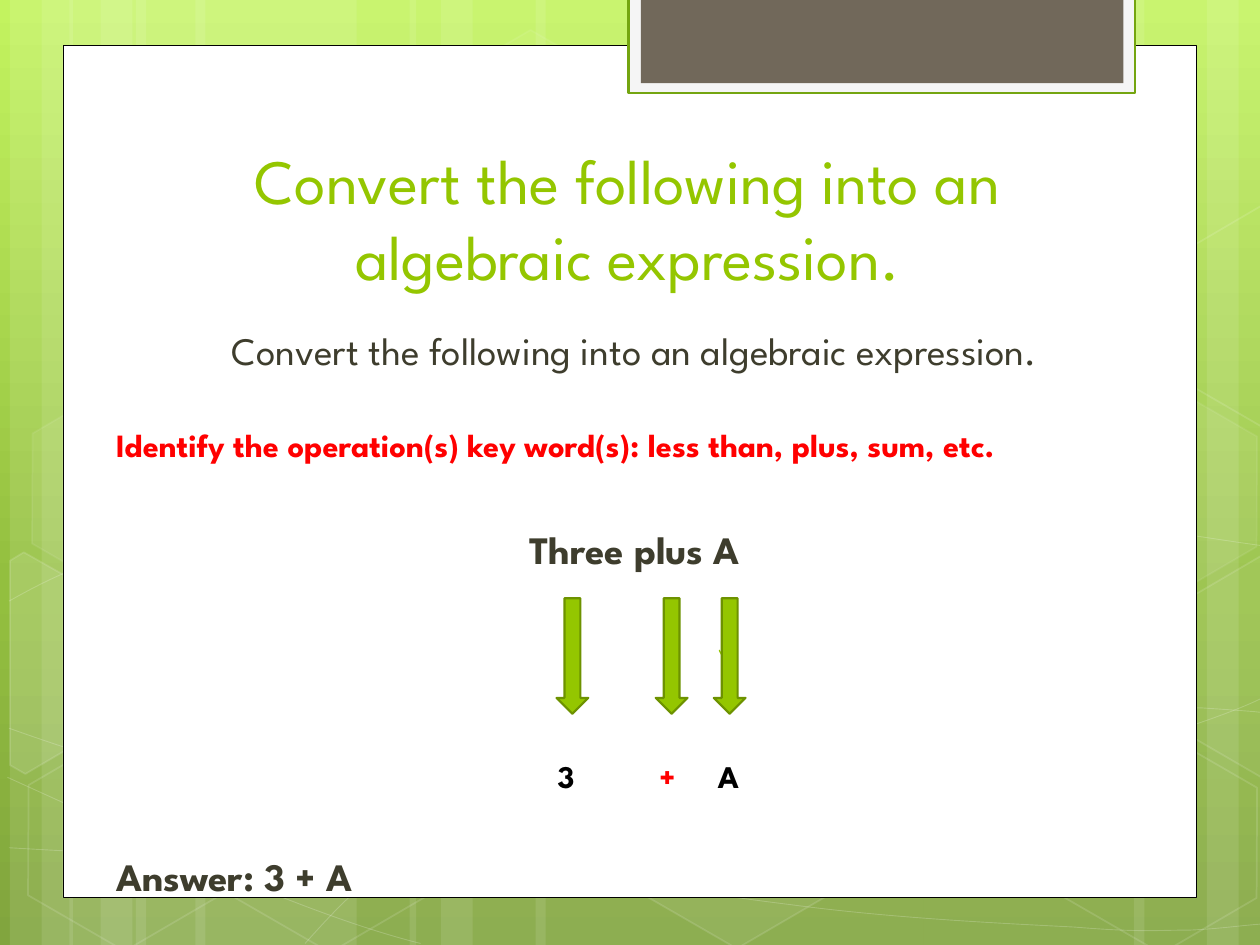
"""Build the slide on turning words into an algebraic expression."""
from copy import deepcopy
from math import cos, radians, sin
from typing import NamedTuple, Optional

from lxml.etree import SubElement
from pptx import Presentation
from pptx.dml.color import RGBColor
from pptx.enum.shapes import MSO_CONNECTOR as Link, MSO_SHAPE as Kind
from pptx.enum.text import MSO_ANCHOR as Anchor, PP_ALIGN as Align
from pptx.oxml.ns import qn
from pptx.util import Cm, Pt

FONT = "League Spartan"
WHITE, GREEN, DARK, RED, BLACK = "FFFFFF", "94C600", "3E3D2D", "FF0000", "000000"
WIDE, HIGH = 25.4, 19.05
TILT = 30
ARROWS = (14.39, 11.22, 13.22)


class Box(NamedTuple):
    left: float
    top: float
    width: float
    height: float


class Look(NamedTuple):
    fill: Optional[str] = None
    line: Optional[str] = None
    weight: float = 1
    fill_part: int = 100
    line_part: int = 100


class Hex(NamedTuple):
    left: float
    top: float
    fill: int
    line: int


class Cut(NamedTuple):
    mid: tuple
    points: tuple
    fill: int


class Run(NamedTuple):
    text: str
    size: float
    hue: str
    bold: bool = False


class Para(NamedTuple):
    runs: tuple
    align: Align = Align.LEFT
    before: float = 0


STRIPES = (
    (2.74, 4.45), (0.2, 1.27), (0.84, 2.11),
    (3.94, 4.45), (1.4, 1.27), (2.03, 2.11),
    (18.62, 4.45), (24.33, 1.27), (22.86, 2.11),
    (10.8, 7.82), (8.26, 1.27), (8.89, 2.11),
)
CURVES = (
    ((0.18, 17.09), (1.55, 17.17), (2.92, 17.25), (4.83, 17.22), (6.73, 17.2),
     (9.09, 17.15), (11.63, 16.89), (14.17, 16.64), (17.78, 16.15), (20.12, 15.67),
     (22.43, 15.19), (24.82, 14.43), (25.58, 14)),
    ((0.18, 12.12), (0.91, 11.71), (1.65, 11.33), (3.07, 10.95), (4.52, 10.57),
     (6.58, 10.01), (8.81, 9.83), (11.07, 9.65), (13.82, 9.63), (16.61, 9.83),
     (19.41, 10.03), (24.05, 10.82), (25.58, 11.02)),
    ((0.15, 15.67), (3.23, 17.07), (6.27, 18.47), (8.48, 19.02)),
    ((0.18, 14.68), (0.97, 14.96), (1.78, 15.24), (3.25, 15.65), (4.72, 16.03),
     (6.93, 16.66), (9.07, 17.09), (11.18, 17.53), (13.84, 17.98), (15.95, 18.24),
     (18.06, 18.52), (20.32, 18.62), (21.67, 18.69), (22.99, 18.8), (23.34, 18.75),
     (24, 18.75), (24.66, 18.72), (25.12, 18.64), (25.58, 18.62)),
    ((6.15, 19.02), (6.6, 18.52), (7.06, 18.01), (7.67, 17.55), (8.28, 17.09),
     (9.14, 16.59), (9.86, 16.23), (10.57, 15.88), (11, 15.72), (11.94, 15.47),
     (12.85, 15.21), (14.55, 14.86), (15.44, 14.68), (16.36, 14.5), (16.48, 14.5),
     (17.27, 14.45), (18.06, 14.38), (19.3, 14.3), (20.17, 14.27), (21.06, 14.25),
     (22.5, 14.27), (22.5, 14.27), (23.07, 14.27), (23.64, 14.27), (24.21, 14.27),
     (24.66, 14.3), (25.1, 14.33), (25.32, 14.35), (25.55, 14.38), (25.48, 14.35), (25.55, 14.38)),
)
HEXES = (
    Hex(8.48, 0.91, 4, 8), Hex(12.62, 14.96, 6, 12), Hex(0.28, 15.01, 0, 12),
    Hex(0.36, 7.92, 7, 8), Hex(4.42, 15.04, 0, 12), Hex(19.13, 11.51, 10, 12),
    Hex(21.18, 15.06, 0, 12), Hex(21.18, 7.98, 7, 8),
)
LEFT = ((0.2, 11.3), (0.48, 11.13), (2.44, 12.24), (2.41, 14.48), (0.51, 15.6), (0.2, 15.42))
RIGHT = ((23.52, 12.32), (25.43, 11.2), (25.63, 11.33), (25.63, 15.57), (25.45, 15.67), (23.52, 14.55))
UPPER = tuple((x, y - 7.06) for x, y in RIGHT)
CUTS = (Cut((0.91, 13.59), LEFT, 10), Cut((25.02, 13.21), RIGHT, 4), Cut((25.02, 6.12), UPPER, 0))
TITLE = (Para((Run("Convert the following into an algebraic expression.", 36, GREEN),), Align.CENTER),)
BODY = (
    Para((Run("Convert the following into an algebraic expression.", 22.2, DARK),), Align.CENTER),
    Para((Run("Identify the operation(s) key word(s): less than, plus, sum, etc.", 18.5, RED, True),), before=29.6),
    Para((Run("Three plus A", 22.2, DARK, True),), Align.CENTER, 35.2),
    Para((Run("Answer: 3 + A", 22.2, DARK, True),), before=160.2),
)
TERMS = (Para((Run("3\t", 18, BLACK, True), Run("+\t", 18, RED, True), Run("A", 18, BLACK, True))),)


def tint(hue: str) -> RGBColor:
    return RGBColor.from_string(hue)


def fade(node, part: int) -> None:
    if part < 100:
        for hue in node.iter(qn("a:srgbClr")):
            SubElement(hue, qn("a:alpha")).set("val", str(part * 1000))


def style(shape, look: Look) -> None:
    shape.shadow.inherit = False
    props = shape.element.spPr
    if look.fill and look.fill_part:
        shape.fill.solid()
        shape.fill.fore_color.rgb = tint(look.fill)
        fade(props, look.fill_part)
    else:
        shape.fill.background()
    if look.line:
        shape.line.color.rgb = tint(look.line)
        shape.line.width = Pt(look.weight)
        fade(props.find(qn("a:ln")), look.line_part)
    else:
        shape.line.fill.background()


def draw(slide, kind: Kind, box: Box, look: Look):
    shape = slide.shapes.add_shape(kind, *map(Cm, box))
    style(shape, look)
    return shape


def trace(slide, points, look: Look, close: bool):
    first, *rest = [(Cm(x), Cm(y)) for x, y in points]
    pen = slide.shapes.build_freeform(*first, scale=1.0)
    pen.add_line_segments(rest, close=close)
    shape = pen.convert_to_shape()
    style(shape, look)
    return shape


def bend(shape) -> None:
    track = next(shape.element.iter(qn("a:path")))
    for i, leg in enumerate(track.findall(qn("a:lnTo"))):
        if i % 3 == 0:
            curve = SubElement(track, qn("a:cubicBezTo"))
        curve.append(leg[0])
        track.remove(leg)


def turn(points, mid, angle: float) -> list:
    c, s = cos(radians(angle)), sin(radians(angle))
    gaps = [(x - mid[0], y - mid[1]) for x, y in points]
    return [(mid[0] + x * c - y * s, mid[1] + x * s + y * c) for x, y in gaps]


def write(slide, box: Box, paras, inset: float = 0.25, anchor: Anchor = Anchor.TOP):
    frame = slide.shapes.add_textbox(*map(Cm, box)).text_frame
    frame.word_wrap = True
    frame.margin_left = Cm(inset)
    frame.vertical_anchor = anchor
    for i, para in enumerate(paras):
        line = frame.add_paragraph() if i else frame.paragraphs[0]
        line.alignment = para.align
        line.space_before = Pt(para.before)
        for item in para.runs:
            run = line.add_run()
            run.text = item.text
            run.font.name, run.font.size, run.font.bold = FONT, Pt(item.size), item.bold
            run.font.color.rgb = tint(item.hue)
    return frame


def set_tabs(line, stops) -> None:
    tabs = SubElement(line._p.get_or_add_pPr(), qn("a:tabLst"))
    for stop in stops:
        tab = SubElement(tabs, qn("a:tab"))
        tab.set("pos", str(Cm(stop)))
        tab.set("algn", "l")


def shade(slide, stops) -> None:
    fill = slide.background.fill
    fill.gradient()
    fill.gradient_angle = 270
    ramp = next(slide.element.iter(qn("a:gsLst")))
    ramp.append(deepcopy(ramp[-1]))
    for stop, (place, hue) in zip(fill.gradient_stops, stops):
        stop.position = place
        stop.color.rgb = tint(hue)


def point_down(slide, x: float, top: float, end: float) -> None:
    line = slide.shapes.add_connector(Link.STRAIGHT, Cm(x), Cm(top), Cm(x), Cm(end))
    line.line.color.rgb = tint(GREEN)
    line.line.width = Pt(0.75)
    props = line._element.spPr
    SubElement(props.find(qn("a:ln")), qn("a:tailEnd")).set("type", "arrow")
    SubElement(props, qn("a:effectLst"))


def main() -> None:
    deck = Presentation()
    deck.slide_width, deck.slide_height = Cm(WIDE), Cm(HIGH)
    slide = deck.slides.add_slide(deck.slide_layouts[6])
    shade(slide, ((0, "C3F35F"), (0.62, "93BF3F"), (1, "81A53E")))
    for left, width in STRIPES:
        draw(slide, Kind.RECTANGLE, Box(left, 0, width, HIGH), Look(WHITE, fill_part=10))
    for knots in CURVES:
        bend(trace(slide, knots, Look(line=WHITE, weight=0.5, line_part=20), False))
    for cell in HEXES:
        look = Look(WHITE, WHITE, 1, cell.fill, cell.line)
        shape = draw(slide, Kind.HEXAGON, Box(cell.left, cell.top, 4.45, 3.86), look)
        shape.adjustments[0] = 0.285
        shape.rotation = TILT
    for cut in CUTS:
        look = Look(WHITE, WHITE, 1, cut.fill, 12)
        trace(slide, turn(cut.points, cut.mid, -TILT), look, True).rotation = TILT
    draw(slide, Kind.RECTANGLE, Box(1.27, 0.91, 22.86, 17.19), Look(WHITE, BLACK, 0.5))
    draw(slide, Kind.RECTANGLE, Box(12.67, -0.05, 10.21, 1.93), Look("F5F5F5", "74A510", 1.25))
    draw(slide, Kind.RECTANGLE, Box(12.92, -0.05, 9.73, 1.73), Look("71685A"))
    write(slide, Box(2.9, 2.85, 19.51, 3.18), TITLE, anchor=Anchor.BOTTOM)
    write(slide, Box(1.91, 6.47, 21.59, 11.33), BODY, 0.43)
    point_down(slide, 14.61, 12.07, 13.34)
    for left in ARROWS:
        draw(slide, Kind.DOWN_ARROW, Box(left, 12.06, 0.64, 2.33), Look(GREEN, "6D9200", 1.25))
    terms = write(slide, Box(10.16, 15.14, 5.92, 1.02), TERMS, 1.08)
    set_tabs(terms.paragraphs[0], (2.05, 3.23))
    deck.save("out.pptx")


if __name__ == "__main__":
    main()
